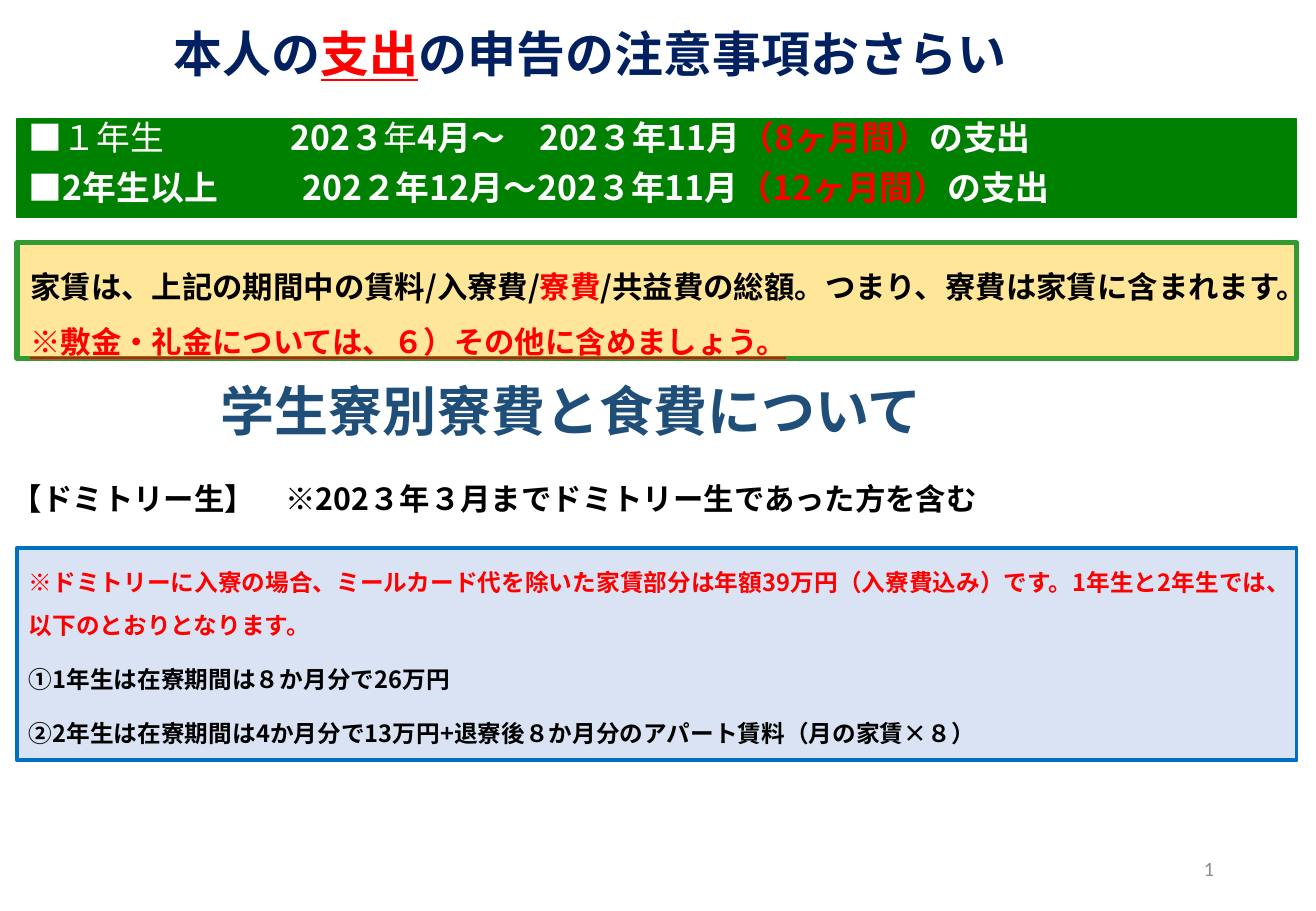
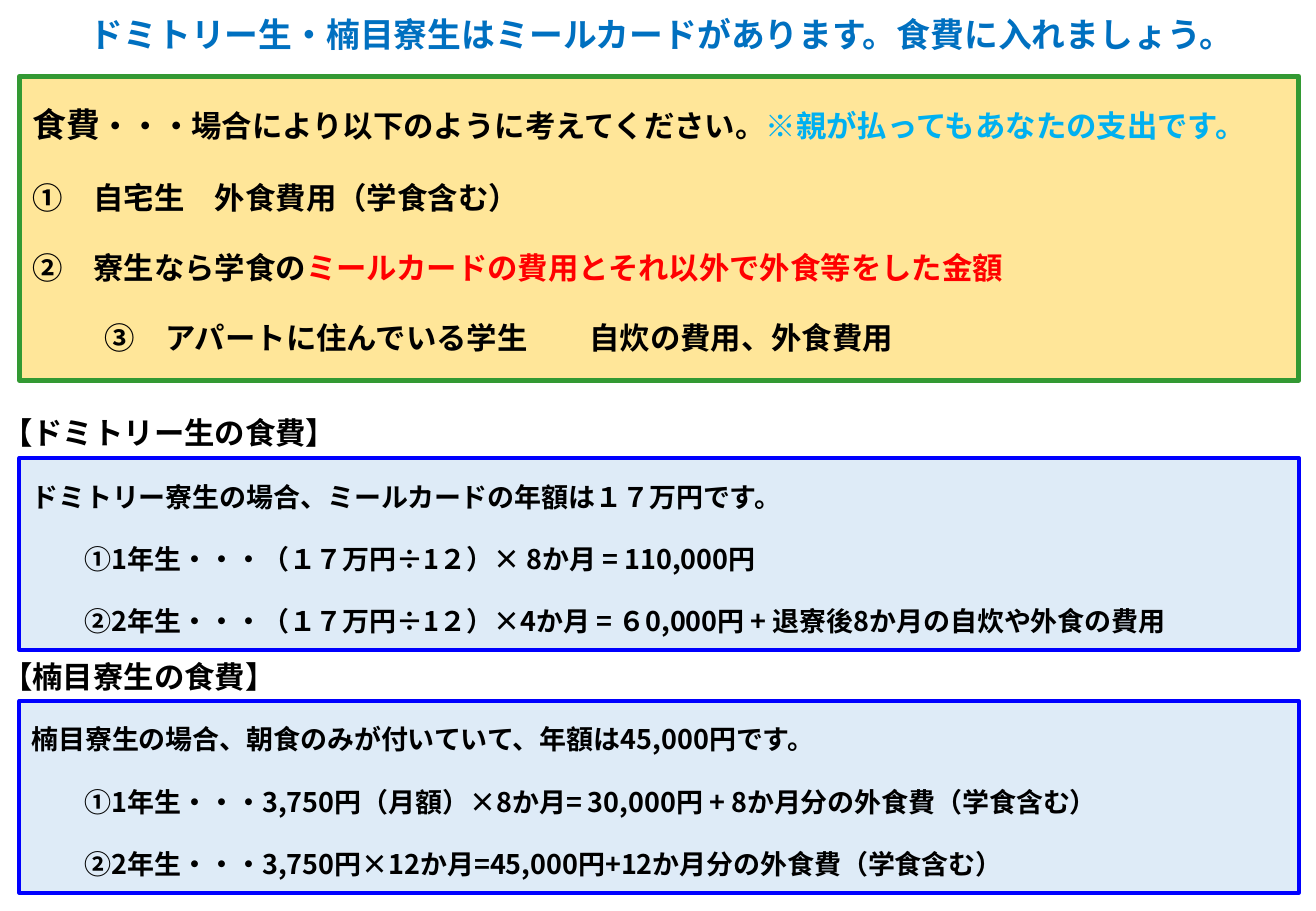
from dataclasses import dataclass

from lxml import etree
from pptx import Presentation
from pptx.dml.color import RGBColor
from pptx.enum.shapes import MSO_SHAPE
from pptx.enum.text import MSO_ANCHOR, PP_ALIGN
from pptx.oxml.ns import qn
from pptx.util import Inches, Pt

RECTANGLE = MSO_SHAPE.RECTANGLE
TOP, MIDDLE = MSO_ANCHOR.TOP, MSO_ANCHOR.MIDDLE
LEFT, RIGHT = PP_ALIGN.LEFT, PP_ALIGN.RIGHT


@dataclass(frozen=True)
class Theme:
    # Fonts
    font: str = "Noto Sans CJK JP"
    number_font: str = "Calibri"
    # Text colours
    black: str = "000000"
    white: str = "FFFFFF"
    red: str = "FF0000"
    navy: str = "002060"
    steel: str = "1F4E79"
    blue: str = "0070C0"
    sky: str = "00B0F0"
    gray: str = "8C8C8C"
    # Box fills and lines
    green: str = "008000"
    leaf: str = "339933"
    cream: str = "FFE699"
    lavender: str = "DAE3F3"
    ice: str = "DEEBF7"
    bright_blue: str = "0000FF"
    # Type sizes
    heading: int = 32
    title: int = 29
    lead: int = 20
    body: int = 18
    detail: int = 16
    note: int = 14
    number: int = 12
    # Line spacing, and paragraph gaps as shares of the type size
    tight: float = 0.8
    loose: float = 1.5
    before: float = 0.2
    after: float = 0.3


@dataclass(frozen=True)
class BoxStyle:
    fill: str
    line: str
    width: float
    insets: tuple = (0.1, 0.05)


@dataclass(frozen=True)
class Span:
    text: str
    color: str = Theme.black
    bold: bool = True
    underline: bool = False
    size: int = 0


@dataclass(frozen=True)
class Line:
    spans: tuple
    tabs: tuple = ()


THEME = Theme()
BAND = BoxStyle(THEME.green, THEME.green, 0.75)
RULE = BoxStyle(THEME.cream, THEME.leaf, 3, (0.11, 0.06))
RENT = BoxStyle(THEME.lavender, THEME.blue, 2.25)
MEAL = BoxStyle(THEME.ice, THEME.bright_blue, 2.25)
BOX_WIDTH = 10.53


def line(*spans, tabs=()):
    """A paragraph; plain strings are black bold text."""
    return Line(tuple(Span(s) if isinstance(s, str) else s for s in spans), tabs)


def red(text, underline=False):
    return Span(text, THEME.red, underline=underline)


def white(text, bold=True):
    return Span(text, THEME.white, bold)


class Deck:
    def __init__(self, theme):
        self.theme = theme
        self.presentation = Presentation()
        self.presentation.slide_width = Inches(10.83)
        self.presentation.slide_height = Inches(7.5)
        self.slide = None

    def new_slide(self):
        self.slide = self.presentation.slides.add_slide(self.presentation.slide_layouts[6])

    def format_run(self, run, span, size, font):
        run.font.size = Pt(span.size or size)
        run.font.bold = span.bold
        run.font.underline = span.underline
        run.font.color.rgb = RGBColor.from_string(span.color)
        run.font.name = font
        # East Asian text takes the same font
        properties = run._r.get_or_add_rPr()
        etree.SubElement(properties, qn("a:ea")).set("typeface", font)

    def set_tabs(self, paragraph, positions):
        properties = paragraph._p.get_or_add_pPr()
        tab_list = etree.SubElement(properties, qn("a:tabLst"))
        for position in positions:
            tab = etree.SubElement(tab_list, qn("a:tab"))
            tab.set("pos", str(Inches(position)))
            tab.set("algn", "l")

    def fill_text(self, shape, lines, size, spacing, insets=(0.1, 0.05),
                  align=LEFT, anchor=TOP, font=None):
        frame = shape.text_frame
        frame.word_wrap = True
        frame.vertical_anchor = anchor
        frame.margin_left = frame.margin_right = Inches(insets[0])
        frame.margin_top = frame.margin_bottom = Inches(insets[1])
        for index, item in enumerate(lines):
            paragraph = frame.add_paragraph() if index else frame.paragraphs[0]
            largest = max(span.size or size for span in item.spans)
            paragraph.alignment = align
            paragraph.line_spacing = spacing
            paragraph.space_before = Pt(largest * self.theme.before)
            paragraph.space_after = Pt(largest * self.theme.after)
            if item.tabs:
                self.set_tabs(paragraph, item.tabs)
            for span in item.spans:
                run = paragraph.add_run()
                run.text = span.text
                self.format_run(run, span, size, font or self.theme.font)

    def label(self, left, top, width, height, content, size, spacing=None, **options):
        shape = self.slide.shapes.add_textbox(
            Inches(left), Inches(top), Inches(width), Inches(height))
        self.fill_text(shape, [content], size, spacing or self.theme.tight, **options)

    def section(self, left, top, text):
        self.label(left, top, 9.57, 0.34, line(text), self.theme.body)

    def box(self, left, top, height, style, lines, size, spacing=None):
        shape = self.slide.shapes.add_shape(
            RECTANGLE, Inches(left), Inches(top), Inches(BOX_WIDTH), Inches(height))
        shape.shadow.inherit = False
        shape.fill.solid()
        shape.fill.fore_color.rgb = RGBColor.from_string(style.fill)
        shape.line.color.rgb = RGBColor.from_string(style.line)
        shape.line.width = Pt(style.width)
        self.fill_text(shape, lines, size, spacing or self.theme.loose, style.insets)

    def page_number(self, number):
        self.label(7.65, 6.95, 2.44, 0.4, line(Span(str(number), self.theme.gray, False)),
                   self.theme.number, 1.0, align=RIGHT, anchor=MIDDLE,
                   font=self.theme.number_font)


def build_expenses(deck):
    left = 0.14
    deck.new_slide()
    deck.page_number(1)

    # Rent rule and reporting periods
    deck.box(left, 2, 0.95, RULE, [line(
        "家賃は、上記の期間中の賃料/入寮費/", red("寮費"),
        "/共益費の総額。つまり、寮費は家賃に含まれます。",
        red("※敷金・礼金については、６）その他に含めましょう。", underline=True))],
        THEME.body)
    deck.box(left, 0.98, 0.81, BAND, [
        line(white("■１年生\t", False), white("202３"), white("年", False),
             white("4月～　202３年11月"),
             red("（8ヶ月間）"), white("の支出"), tabs=(2.15,)),
        line(white("■", False), white("2年生以上\t202２年12月～202３年11月"),
             red("（12ヶ月間）"), white("の支出"), tabs=(2.25,)),
    ], THEME.lead, THEME.tight)

    # Title
    deck.label(1.33, 0.24, 7.56, 0.5, line(
        Span("本人の", THEME.navy), red("支出", underline=True),
        Span("の申告の注意事項おさらい", THEME.navy)), THEME.title)

    # Dormitory rent
    deck.box(left, 4.51, 1.75, RENT, [
        line(red("※ドミトリーに入寮の場合、ミールカード代を除いた家賃部分は年額39万円"
                 "（入寮費込み）です。1年生と2年生では、以下のとおりとなります。")),
        line("①1年生は在寮期間は８か月分で26万円"),
        line("②2年生は在寮期間は4か月分で13万円+退寮後８か月分のアパート賃料（月の家賃×８）"),
    ], THEME.note)
    deck.section(0, 3.96, "【ドミトリー生】　※202３年３月までドミトリー生であった方を含む")
    deck.label(1.72, 3.16, 7.36, 0.53,
               line(Span("学生寮別寮費と食費について", THEME.steel)), THEME.heading)


def build_meals(deck):
    left = 0.16
    item_tab = (0.44,)
    deck.new_slide()

    # General rule and title
    deck.box(left, 0.63, 2.5, RULE, [
        line(Span("食費", size=THEME.lead), "・・・場合により以下のように考えてください。",
             Span("※親が払ってもあなたの支出です。", THEME.sky)),
        line("①　自宅生　外食費用（学食含む）"),
        line("②　寮生なら学食の", red("ミールカードの費用とそれ以外で外食等をした金額")),
        line("\t③　アパートに住んでいる学生\t自炊の費用、外食費用", tabs=(0.59, 4.58)),
    ], THEME.body)
    deck.label(0.64, 0.13, 9.8, 0.37, line(Span(
        "ドミトリー生・楠目寮生はミールカードがあります。食費に入れましょう。",
        THEME.blue)), THEME.lead)

    # Meal costs of each dormitory
    dormitories = [
        ("【ドミトリー生の食費】", 3.42, 3.77,
         "ドミトリー寮生の場合、ミールカードの年額は１７万円です。",
         ("①1年生・・・（１７万円÷1２）× 8か月 = 110,000円",
          "②2年生・・・（１７万円÷1２）×4か月 = ６0,000円 + 退寮後8か月の自炊や外食の費用")),
        ("【楠目寮生の食費】", 5.43, 5.77,
         "楠目寮生の場合、朝食のみが付いていて、年額は45,000円です。",
         ("①1年生・・・3,750円（月額）×8か月= 30,000円 + 8か月分の外食費（学食含む）",
          "②2年生・・・3,750円×12か月=45,000円+12か月分の外食費（学食含む）")),
    ]
    for name, name_top, box_top, summary, items in dormitories:
        deck.section(-0.08, name_top, name)
        deck.box(left, box_top, 1.58, MEAL,
                 [line(summary)] + [line("\t" + item, tabs=item_tab) for item in items],
                 THEME.detail)


def main():
    deck = Deck(THEME)
    build_expenses(deck)
    build_meals(deck)
    deck.presentation.save("out.pptx")


if __name__ == "__main__":
    main()
